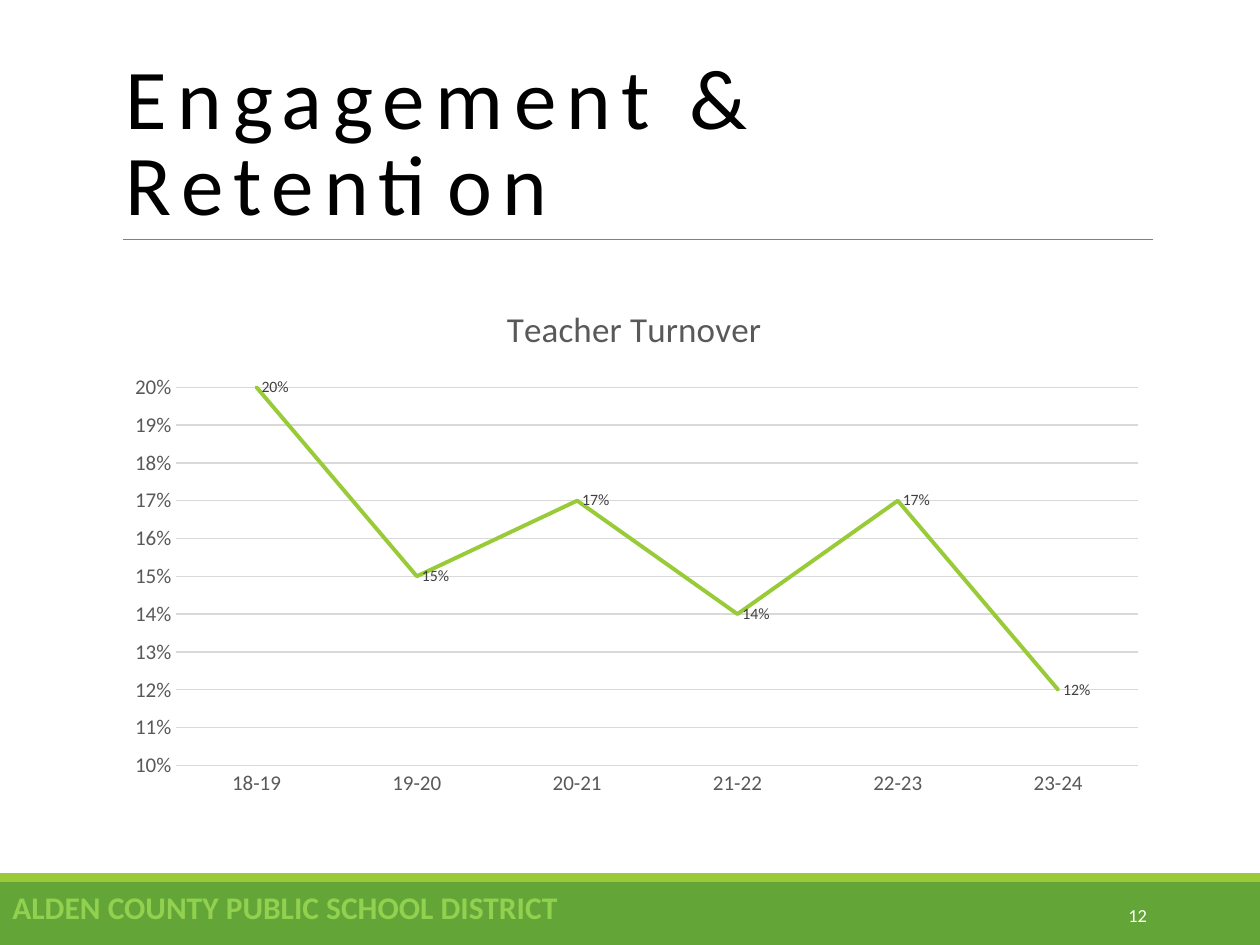
import pptx
import pptx.chart.data
import pptx.dml.color
import pptx.enum.chart
import pptx.enum.shapes
import pptx.enum.text
import pptx.oxml
import pptx.oxml.ns
import pptx.util
from pptx.util import Cm

FONT = "Calibri"
LIME, GREEN = "99CB38", "63A537"
GREY, PALE_GREY = "595959", "D9D9D9"
TURNOVER = {"18-19": 0.2, "19-20": 0.15, "20-21": 0.17,
            "21-22": 0.14, "22-23": 0.17, "23-24": 0.12}


def rgb(value):
    """Turn a hex string into a colour."""
    return pptx.dml.color.RGBColor.from_string(value)


def style_font(font, size, color, bold=False):
    """Set typeface, size, colour and weight."""
    font.name = FONT
    font.size = pptx.util.Pt(size)
    font.bold = bold
    font.color.rgb = rgb(color)


def style_line(line, color, width):
    """Set the colour and width of a line."""
    line.color.rgb = rgb(color)
    line.width = pptx.util.Pt(width)


def add_text(slide, text, left, top, width, height, *, size, color, bold=False,
             align="LEFT", anchor="TOP", leading=None, tracking=None):
    """Add a wrapped text box; lengths are in centimetres."""
    box = slide.shapes.add_textbox(Cm(left), Cm(top), Cm(width), Cm(height))
    frame = box.text_frame
    frame.word_wrap = True
    frame.vertical_anchor = getattr(pptx.enum.text.MSO_ANCHOR, anchor)
    paragraph = frame.paragraphs[0]
    paragraph.alignment = getattr(pptx.enum.text.PP_ALIGN, align)
    if leading:
        paragraph.line_spacing = leading
    run = paragraph.add_run()
    run.text = text
    style_font(run.font, size, color, bold)
    if tracking:
        run.font._element.set("spc", str(tracking * 100))


def add_band(slide, top, height, color):
    """Add a plain band across the slide."""
    band = slide.shapes.add_shape(pptx.enum.shapes.MSO_SHAPE.RECTANGLE,
                                  0, Cm(top), Cm(25.4), Cm(height))
    band.shadow.inherit = False
    band.fill.solid()
    band.fill.fore_color.rgb = rgb(color)
    band.line.fill.background()


def add_rule(slide, left, right, y):
    """Add the thin horizontal rule below the heading."""
    rule = slide.shapes.add_connector(pptx.enum.shapes.MSO_CONNECTOR.STRAIGHT,
                                      Cm(left), Cm(y), Cm(right), Cm(y))
    style_line(rule.line, "808080", 0.5)
    effects = pptx.oxml.parse_xml(f'<a:effectLst {pptx.oxml.ns.nsdecls("a")}/>')
    rule._element.spPr.append(effects)


def place(element, index, **fractions):
    """Give a chart part a manual layout in fractions of the chart."""
    tag = pptx.oxml.ns.qn("c:layout")
    for previous in element.findall(tag):
        element.remove(previous)
    target = '<c:layoutTarget val="inner"/>' if "w" in fractions else ""
    modes = "".join(f'<c:{key}Mode val="edge"/>' for key in "xy")
    values = "".join(f'<c:{key} val="{value}"/>' for key, value in fractions.items())
    element.insert(index, pptx.oxml.parse_xml(
        f'<c:layout {pptx.oxml.ns.nsdecls("c")}><c:manualLayout>'
        f'{target}{modes}{values}</c:manualLayout></c:layout>'))


def style_axes(chart):
    """Format the school years and the percentage scale."""
    years, scale = chart.category_axis, chart.value_axis
    for axis in (years, scale):
        axis.major_tick_mark = pptx.enum.chart.XL_TICK_MARK.NONE
        axis.minor_tick_mark = pptx.enum.chart.XL_TICK_MARK.NONE
        style_font(axis.tick_labels.font, 12, GREY)
    style_line(years.format.line, PALE_GREY, 0.75)
    scale.minimum_scale, scale.maximum_scale, scale.major_unit = 0.1, 0.2, 0.01
    scale.format.line.fill.background()
    style_line(scale.major_gridlines.format.line, PALE_GREY, 0.75)
    scale.tick_labels.number_format = "0%"
    scale.tick_labels.number_format_is_linked = False


def style_series(series):
    """Format the turnover line and its value labels."""
    series.smooth = False
    series.marker.style = pptx.enum.chart.XL_MARKER_STYLE.NONE
    style_line(series.format.line, LIME, 2.25)
    series.format.line._get_or_add_ln().set("cap", "rnd")
    labels = series.data_labels
    labels.show_value = True
    labels.number_format = "0%"
    labels.number_format_is_linked = False
    labels.position = pptx.enum.chart.XL_LABEL_POSITION.RIGHT
    style_font(labels.font, 9, "404040")


def add_turnover_chart(slide):
    """Add the line chart of teacher turnover."""
    data = pptx.chart.data.CategoryChartData(number_format="0%")
    data.categories = list(TURNOVER)
    data.add_series("Series 1", list(TURNOVER.values()))
    chart = slide.shapes.add_chart(pptx.enum.chart.XL_CHART_TYPE.LINE,
                                   Cm(2.29), Cm(5.69), Cm(21.08), Cm(10.59), data).chart
    style_font(chart.font, 10, "000000")
    chart.has_legend = False
    chart.has_title = True
    heading = chart.chart_title.text_frame
    heading.text = "Teacher Turnover"
    style_font(heading.paragraphs[0].runs[0].font, 20, GREY)
    chart.plots[0].vary_by_categories = False
    style_axes(chart)
    style_series(chart.plots[0].series[0])
    place(chart.chart_title._element, 1, x=0.37, y=0.03)
    place(chart._chartSpace.chart.plotArea, 0, x=0.06, y=0.2, w=0.92, h=0.72)


def main():
    """Build and save the slide."""
    deck = pptx.Presentation()
    deck.slide_width, deck.slide_height = Cm(25.4), Cm(19.05)
    slide = deck.slides.add_slide(deck.slide_layouts[6])
    add_band(slide, 17.78, 1.27, GREEN)
    add_band(slide, 17.6, 0.18, LIME)
    add_rule(slide, 2.48, 23.24, 4.82)
    add_text(slide, "Engagement & Retention", 2.29, 0.79, 20.95, 4.04, size=48.6,
             color="000000", anchor="BOTTOM", leading=0.85, tracking=6)
    add_text(slide, "12", 20.62, 17.94, 2.75, 1.01, size=10.5, color="FFFFFF",
             align="RIGHT", anchor="MIDDLE")
    add_text(slide, "ALDEN COUNTY PUBLIC SCHOOL DISTRICT", 0, 17.78, 25.4, 1.02,
             size=18, color="92D050", bold=True)
    add_turnover_chart(slide)
    deck.save("out.pptx")


if __name__ == "__main__":
    main()
